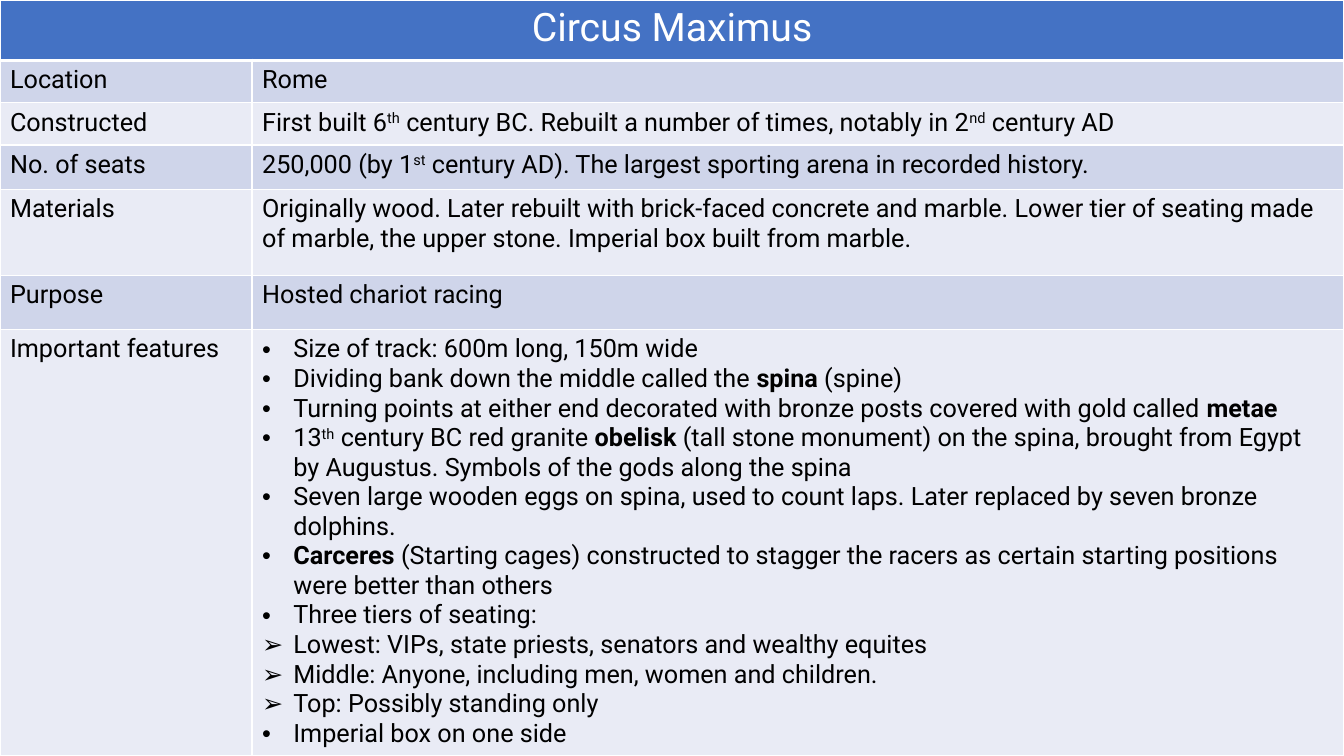
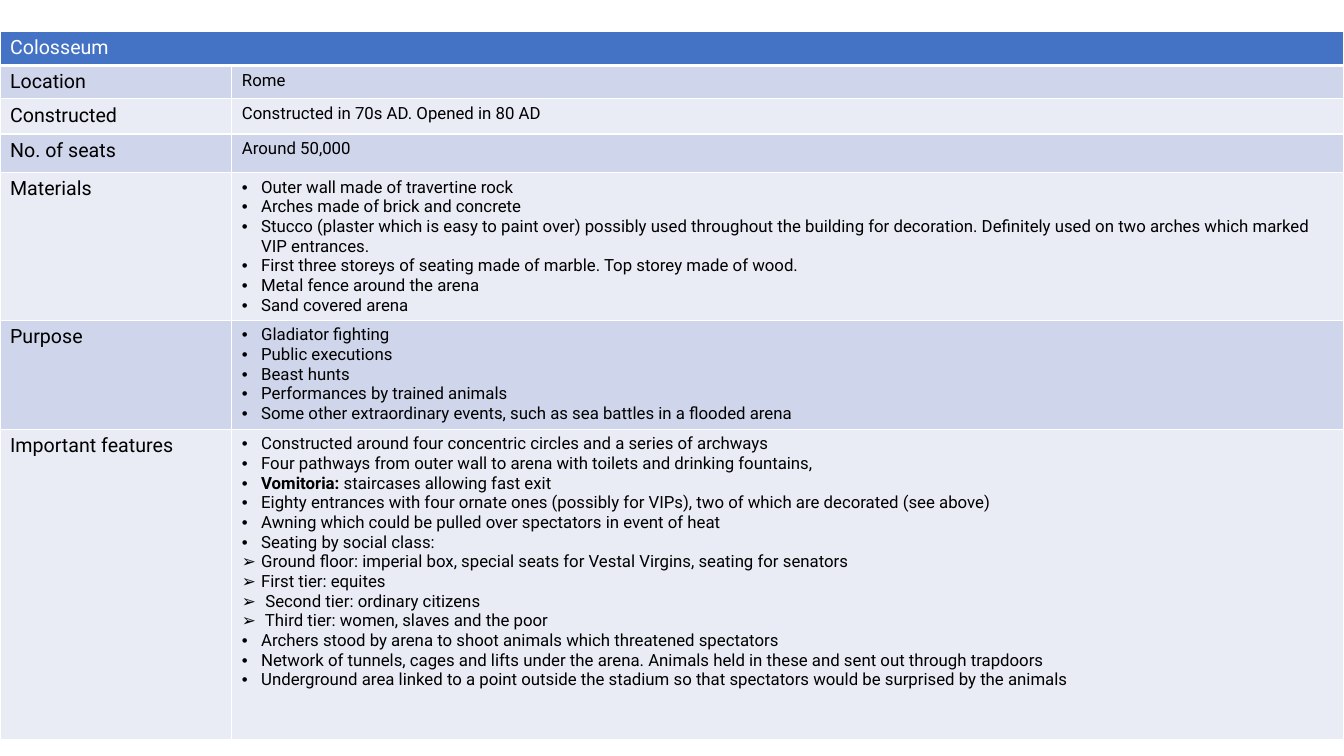
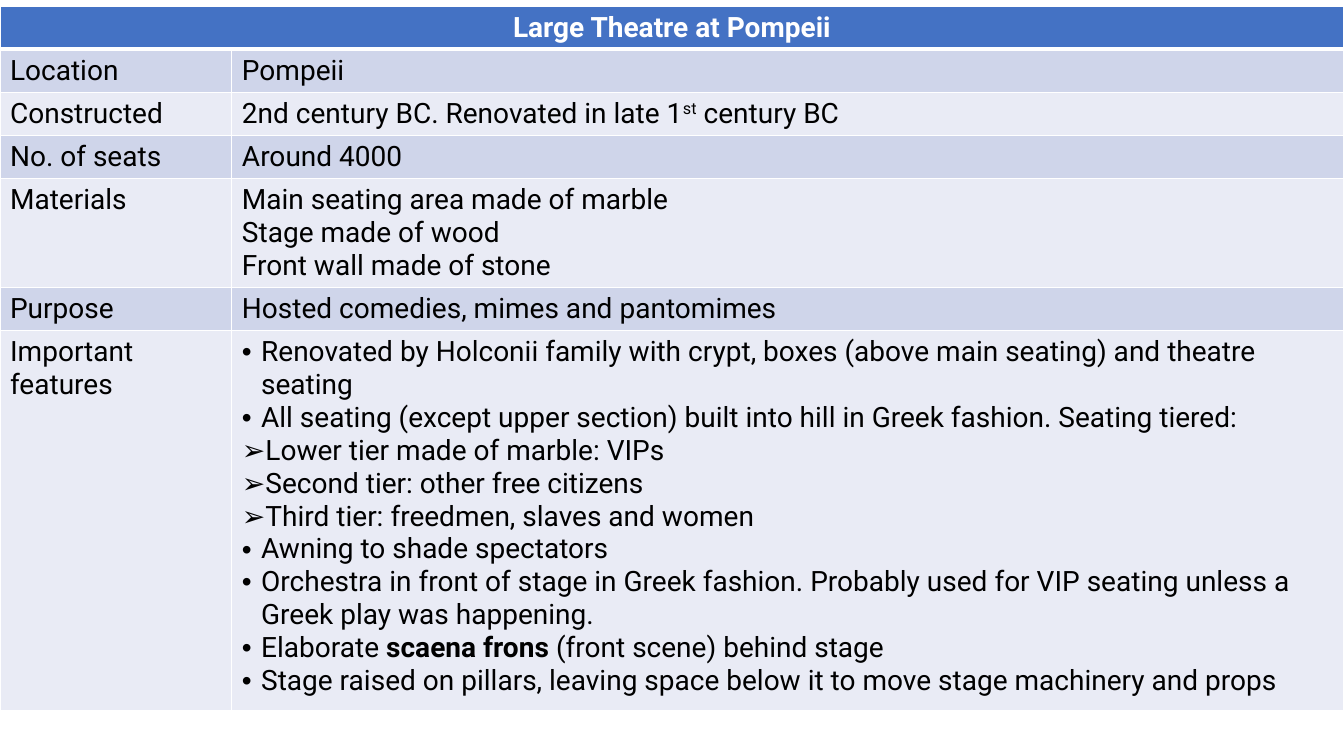
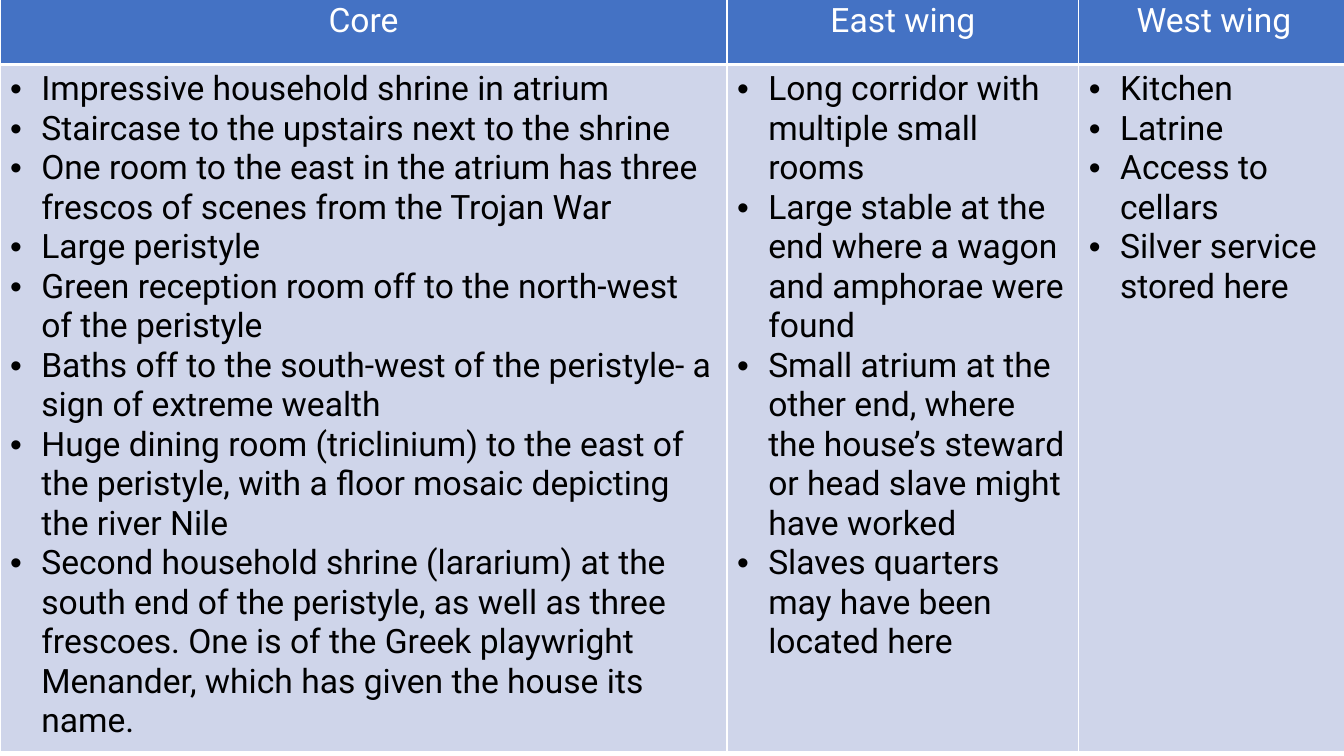
"""Build four table slides on Roman venues and a Pompeian house."""
from lxml import etree
from pptx import Presentation
from pptx import util as u
from pptx.dml.color import RGBColor
from pptx.enum import text as t
from pptx.oxml.ns import qn

COLORS = {"header": "4472C4", "dark": "CFD5EA", "light": "E9EBF5", "white": "FFFFFF", "black": "000000"}
FONT = "Roboto"
LABELS = ["Location", "Constructed", "No. of seats", "Materials", "Purpose", "Important features"]
BULLETS = ("•", "➢")

VENUES = [
    {
        "title": "Circus Maximus", "title_size": 28, "title_bold": False, "align": t.PP_ALIGN.CENTER,
        "label_size": 18, "size": 18, "indent": 0.31, "top": 0, "columns": [2.5, 10.83],
        "heights": [0.6, 0.42, 0.42, 0.44, 0.85, 0.54, 4.23],
        "details": [
            ["Rome"],
            ["First built 6|^th| century BC. Rebuilt a number of times, notably in 2|^nd| century AD"],
            ["250,000 (by 1|^st| century AD). The largest sporting arena in recorded history."],
            ["Originally wood. Later rebuilt with brick-faced concrete and marble. Lower tier of seating made "
             "of marble, the upper stone. Imperial box built from marble."],
            ["Hosted chariot racing"],
            ["•Size of track: 600m long, 150m wide",
             "•Dividing bank down the middle called the |*spina| (spine)",
             "•Turning points at either end decorated with bronze posts covered with gold called |*metae",
             "•13|^th| century BC red granite |*obelisk| (tall stone monument) on the spina, brought from Egypt "
             "by Augustus. Symbols of the gods along the spina",
             "•Seven large wooden eggs on spina, used to count laps. Later replaced by seven bronze dolphins.",
             "•|*Carceres |(Starting cages) constructed to stagger the racers as certain starting positions "
             "were better than others",
             "•Three tiers of seating:",
             "➢Lowest: VIPs, state priests, senators and wealthy equites",
             "➢Middle: Anyone, including men, women and children.",
             "➢Top: Possibly standing only",
             "•Imperial box on one side"],
        ],
    },
    {
        "title": "Colosseum", "title_size": 14, "title_bold": False, "align": t.PP_ALIGN.LEFT,
        "label_size": 14, "size": 12, "indent": 0.19, "top": 0.31, "columns": [2.3, 11.03],
        "heights": [0.34, 0.31, 0.35, 0.38, 1.23, 1.08, 3.08],
        "details": [
            ["Rome"],
            ["Constructed in 70s AD. Opened in 80 AD"],
            ["Around 50,000"],
            ["•Outer wall made of travertine rock",
             "•Arches made of brick and concrete",
             "•Stucco (plaster which is easy to paint over) possibly used throughout the building for decoration. "
             "Definitely used on two arches which marked VIP entrances.",
             "•First three storeys of seating made of marble. Top storey made of wood.",
             "•Metal fence around the arena",
             "•Sand covered arena"],
            ["•Gladiator fighting",
             "•Public executions",
             "•Beast hunts",
             "•Performances by trained animals",
             "•Some other extraordinary events, such as sea battles in a flooded arena"],
            ["•Constructed around four concentric circles and a series of archways",
             "•Four pathways from outer wall to arena with toilets and drinking fountains,",
             "•|*Vomitoria: |staircases allowing fast exit",
             "•Eighty entrances with four ornate ones (possibly for VIPs), two of which are decorated (see above)",
             "•Awning which could be pulled over spectators in event of heat",
             "•Seating by social class:",
             "➢Ground floor: imperial box, special seats for Vestal Virgins, seating for senators",
             "➢First tier: equites",
             "➢ Second tier: ordinary citizens",
             "➢ Third tier: women, slaves and the poor",
             "•Archers stood by arena to shoot animals which threatened spectators",
             "•Network of tunnels, cages and lifts under the arena. Animals held in these and sent out through "
             "trapdoors",
             "•Underground area linked to a point outside the stadium so that spectators would be surprised by "
             "the animals"],
        ],
    },
    {
        "title": "Large Theatre at Pompeii", "title_size": 20, "title_bold": True, "align": t.PP_ALIGN.CENTER,
        "label_size": 20, "size": 20, "indent": 0.19, "top": 0.06, "columns": [2.3, 11.03],
        "heights": [0.4, 0.4, 0.4, 0.4, 1, 0.4, 3.77],
        "details": [
            ["Pompeii"],
            ["2nd century BC. Renovated in late 1|^st| century BC"],
            ["Around 4000"],
            ["Main seating area made of marble", "Stage made of wood", "Front wall made of stone"],
            ["Hosted comedies, mimes and pantomimes"],
            ["•Renovated by Holconii family with crypt, boxes (above main seating) and theatre seating",
             "•All seating (except upper section) built into hill in Greek fashion. Seating tiered:",
             "➢Lower tier made of marble: VIPs",
             "➢Second tier: other free citizens",
             "➢Third tier: freedmen, slaves and women",
             "•Awning to shade spectators",
             "•Orchestra in front of stage in Greek fashion. Probably used for VIP seating unless a Greek play "
             "was happening.",
             "•Elaborate |*scaena frons |(front scene) behind stage",
             "•Stage raised on pillars, leaving space below it to move stage machinery and props"],
        ],
    },
]

HOUSE_PARTS = {
    "Core": [
        "•Impressive household shrine in atrium",
        "•Staircase to the upstairs next to the shrine",
        "•One room to the east in the atrium has three frescos of scenes from the Trojan War",
        "•Large peristyle",
        "•Green reception room off to the north-west of the peristyle",
        "•Baths off to the south-west of the peristyle- a sign of extreme wealth",
        "•Huge dining room (triclinium) to the east of the peristyle, with a floor mosaic depicting the river Nile",
        "•Second household shrine (lararium) at the south end of the peristyle, as well as three frescoes. "
        "One is of the Greek playwright Menander, which has given the house its name."],
    "East wing": [
        "•Long corridor with multiple small rooms",
        "•Large stable at the end where a wagon and amphorae were found",
        "•Small atrium at the other end, where the house’s steward or head slave might have worked",
        "•Slaves quarters may have been located here"],
    "West wing": ["•Kitchen", "•Latrine", "•Access to cellars", "•Silver service stored here"],
}


def write_cell(cell, lines, fill, size, color="black", bold=False, align=t.PP_ALIGN.LEFT, indent=0, bottom=1):
    """Fill a bordered cell; "|" splits runs, "*" marks bold and "^" superscript."""
    properties = cell._tc.get_or_add_tcPr()
    for side, width in (("L", 1), ("R", 1), ("T", 1), ("B", bottom)):
        line = etree.SubElement(properties, qn(f"a:ln{side}"), w=str(u.Pt(width)))
        solid = etree.SubElement(line, qn("a:solidFill"))
        etree.SubElement(solid, qn("a:srgbClr"), val=COLORS["white"])
    cell.fill.solid()
    cell.fill.fore_color.rgb = RGBColor.from_string(COLORS[fill])
    for index, content in enumerate(lines):
        frame = cell.text_frame
        paragraph = frame.add_paragraph() if index else frame.paragraphs[0]
        paragraph.alignment = align
        if content.startswith(BULLETS):
            settings = paragraph._p.get_or_add_pPr()
            settings.set("marL", str(u.Inches(indent)))
            settings.set("indent", str(-u.Inches(indent)))
            etree.SubElement(settings, qn("a:buFont"), typeface="Arial")
            etree.SubElement(settings, qn("a:buChar"), char=content[0])
            content = content[1:]
        for part in filter(None, content.split("|")):
            run = paragraph.add_run()
            run.text = part.lstrip("*^")
            run.font.name = FONT
            run.font.size = u.Pt(size)
            run.font.bold = bold or part.startswith("*")
            run.font.color.rgb = RGBColor.from_string(COLORS[color])
            if part.startswith("^"):
                run._r.get_or_add_rPr().set("baseline", "30000")


def add_grid(columns, heights, top):
    """Add a slide holding one table and return the table."""
    slide = presentation.slides.add_slide(presentation.slide_layouts[6])
    table = slide.shapes.add_table(len(heights), len(columns), 0, u.Inches(top),
                                   u.Inches(sum(columns)), u.Inches(sum(heights))).table
    for column, width in zip(table.columns, columns):
        column.width = u.Inches(width)
    for row, height in zip(table.rows, heights):
        row.height = u.Inches(height)
    return table


presentation = Presentation()
presentation.slide_width = u.Inches(13.33)
presentation.slide_height = u.Inches(7.5)

for venue in VENUES:
    table = add_grid(venue["columns"], venue["heights"], venue["top"])
    table.cell(0, 0).merge(table.cell(0, 1))
    for column, lines in enumerate([[venue["title"]], []]):
        write_cell(table.cell(0, column), lines, "header", venue["title_size"], color="white",
                   bold=venue["title_bold"], align=venue["align"], bottom=3)
    for row, (label, details) in enumerate(zip(LABELS, venue["details"]), start=1):
        shade = "dark" if row % 2 else "light"
        write_cell(table.cell(row, 0), [label], shade, venue["label_size"])
        write_cell(table.cell(row, 1), details, shade, venue["size"], indent=venue["indent"])

table = add_grid([7.21, 3.49, 2.68], [0.68, 6.82], -0.04)
for column, (heading, features) in enumerate(HOUSE_PARTS.items()):
    write_cell(table.cell(0, column), [heading], "header", 24, color="white", align=t.PP_ALIGN.CENTER, bottom=3)
    write_cell(table.cell(1, column), features, "dark", 24, indent=0.31)

presentation.save("out.pptx")
